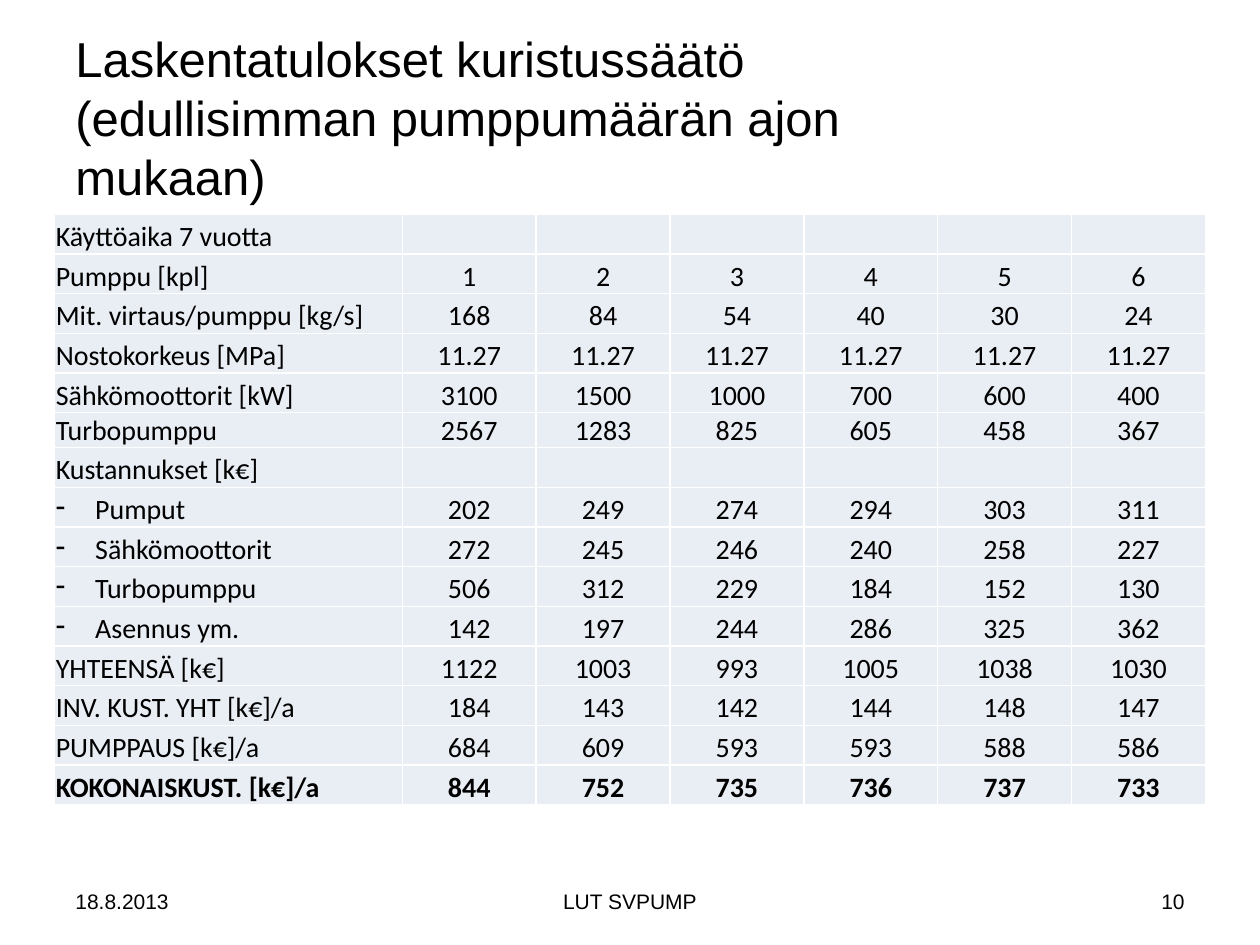
from dataclasses import dataclass

import pptx
import pptx.dml.color
import pptx.enum.text
import pptx.oxml.ns
import pptx.util
from lxml import etree

Pt = pptx.util.Pt
qn = pptx.oxml.ns.qn
Align = pptx.enum.text.PP_ALIGN
Anchor = pptx.enum.text.MSO_ANCHOR


@dataclass(frozen=True)
class Theme:
    ink: str = "000000"
    cell: str = "E9EDF4"
    border: str = "FFFFFF"
    heading_font: str = "Arial"
    table_font: str = "Calibri"
    title_size: int = 28
    table_size: int = 16
    footer_size: int = 12


THEME = Theme()
TITLE = "Laskentatulokset kuristussäätö\v(edullisimman pumppumäärän ajon \vmukaan)"
ROWS = [
    ("Käyttöaika 7 vuotta",),
    ("Pumppu [kpl]", 1, 2, 3, 4, 5, 6),
    ("Mit. virtaus/pumppu [kg/s]", 168, 84, 54, 40, 30, 24),
    ("Nostokorkeus [MPa]",) + (11.27,) * 6,
    ("Sähkömoottorit [kW]", 3100, 1500, 1000, 700, 600, 400),
    ("Turbopumppu", 2567, 1283, 825, 605, 458, 367),
    ("Kustannukset [k€]",),
    ("Pumput", 202, 249, 274, 294, 303, 311),
    ("Sähkömoottorit", 272, 245, 246, 240, 258, 227),
    ("Turbopumppu", 506, 312, 229, 184, 152, 130),
    ("Asennus ym.", 142, 197, 244, 286, 325, 362),
    ("YHTEENSÄ [k€]", 1122, 1003, 993, 1005, 1038, 1030),
    ("INV. KUST. YHT [k€]/a", 184, 143, 142, 144, 148, 147),
    ("PUMPPAUS [k€]/a", 684, 609, 593, 593, 588, 586),
    ("KOKONAISKUST. [k€]/a", 844, 752, 735, 736, 737, 733),
]
COST_ITEMS = range(7, 11)
TIGHT_ROW = 5
TOTAL_ROW = len(ROWS) - 1
VALUE_COLUMNS = 6
LABEL_WIDTH, VALUE_WIDTH = 198.7, 76.5
ROW_HEIGHT, TIGHT_HEIGHT = 22.68, 20


def color(value):
    return pptx.dml.color.RGBColor.from_string(value)


def style_paragraph(para, font, size, align, bold=False):
    para.alignment = align
    for span in para.runs:
        span.font.name = font
        span.font.size = Pt(size)
        span.font.bold = bold
        span.font.color.rgb = color(THEME.ink)


def add_text(page, text, left, top, width, height, size, align=Align.LEFT):
    box = page.shapes.add_textbox(Pt(left), Pt(top), Pt(width), Pt(height))
    frame = box.text_frame
    frame.word_wrap = True
    frame.vertical_anchor = Anchor.MIDDLE
    frame.text = text
    style_paragraph(frame.paragraphs[0], THEME.heading_font, size, align)


def add_dash(para):
    """Give the paragraph a hanging dash as its bullet."""
    properties = para._p.get_or_add_pPr()
    properties.set("marL", str(Pt(22.5)))
    properties.set("indent", str(-Pt(22.5)))
    etree.SubElement(properties, qn("a:buChar")).set("char", "-")


def add_borders(cell):
    properties = cell._tc.get_or_add_tcPr()
    for position, side in enumerate(("lnL", "lnR", "lnT", "lnB")):
        line = etree.Element(qn(f"a:{side}"), w=str(Pt(1)))
        fill = etree.SubElement(line, qn("a:solidFill"))
        etree.SubElement(fill, qn("a:srgbClr")).set("val", THEME.border)
        properties.insert(position, line)


def fill_cell(cell, text, align, bold, dashed):
    cell.fill.solid()
    cell.fill.fore_color.rgb = color(THEME.cell)
    add_borders(cell)
    cell.vertical_anchor = Anchor.BOTTOM
    cell.margin_left = cell.margin_top = cell.margin_right = Pt(0.72)
    cell.margin_bottom = Pt(0)
    para = cell.text_frame.paragraphs[0]
    if dashed:
        add_dash(para)
    if text:
        para.text = text
        style_paragraph(para, THEME.table_font, THEME.table_size, align, bold)
    else:
        # An empty cell would otherwise be as tall as the default type size.
        end = etree.SubElement(para._p, qn("a:endParaRPr"))
        end.set("sz", str(THEME.table_size * 100))


def add_cost_table(page):
    width = LABEL_WIDTH + VALUE_COLUMNS * VALUE_WIDTH
    height = (len(ROWS) - 1) * ROW_HEIGHT + TIGHT_HEIGHT
    table = page.shapes.add_table(
        len(ROWS), VALUE_COLUMNS + 1, Pt(31.2), Pt(122.4), Pt(width), Pt(height)
    ).table
    table.first_row = table.horz_banding = False
    for index, column in enumerate(table.columns):
        column.width = Pt(VALUE_WIDTH if index else LABEL_WIDTH)
    for index, values in enumerate(ROWS):
        table.rows[index].height = Pt(TIGHT_HEIGHT if index == TIGHT_ROW else ROW_HEIGHT)
        for column in range(VALUE_COLUMNS + 1):
            text = str(values[column]) if column < len(values) else ""
            align = Align.CENTER if column else Align.LEFT
            dashed = column == 0 and index in COST_ITEMS
            fill_cell(table.cell(index, column), text, align, index == TOTAL_ROW, dashed)


def add_footer(page):
    for text, left, width, align in (
        ("18.8.2013", 36, 168, Align.LEFT),
        ("LUT SVPUMP", 246, 228, Align.CENTER),
        ("10", 516, 168, Align.RIGHT),
    ):
        add_text(page, text, left, 500.5, width, 28.75, THEME.footer_size, align)


def main():
    deck = pptx.Presentation()
    deck.slide_width, deck.slide_height = Pt(720), Pt(540)
    page = deck.slides.add_slide(deck.slide_layouts[6])
    add_text(page, TITLE, 36, 21.6, 648, 90, THEME.title_size)
    add_cost_table(page)
    add_footer(page)
    deck.save("out.pptx")


if __name__ == "__main__":
    main()
